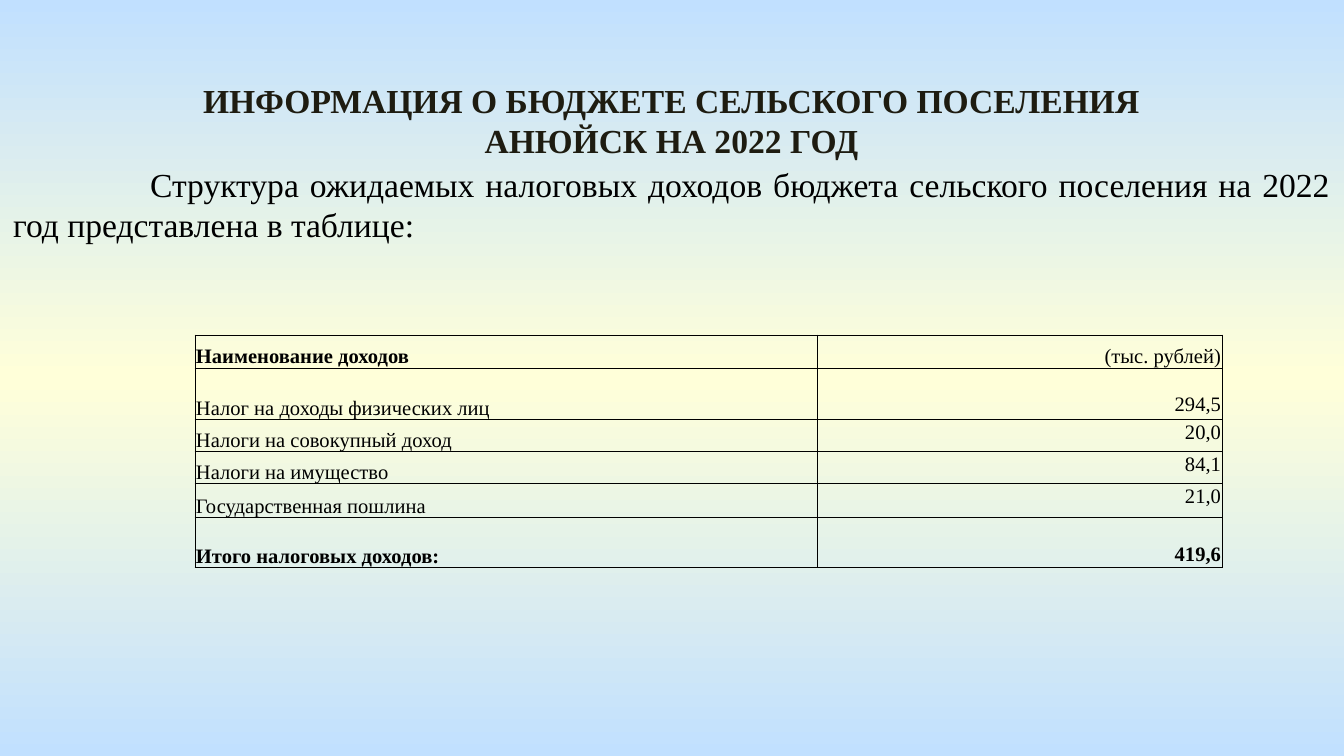
from copy import deepcopy
from dataclasses import dataclass

from pptx import Presentation
from pptx.dml.color import RGBColor
from pptx.enum.text import MSO_ANCHOR, MSO_AUTO_SIZE, PP_ALIGN
from pptx.oxml import parse_xml
from pptx.oxml.ns import nsdecls, qn
from pptx.slide import Slide
from pptx.table import _Cell
from pptx.text.text import TextFrame
from pptx.util import Emu, Pt

BLUE = RGBColor(0xC1, 0xE0, 0xFF)
CREAM = RGBColor(0xFF, 0xFF, 0xD9)
DARK = RGBColor(0x1E, 0x1C, 0x11)
BLACK = RGBColor(0, 0, 0)
FONT = "Times New Roman"
SCALE = 914400 / 134.4
COLS = (622, 405)
GAP = 24


@dataclass
class Row:
    """One line of the income table."""
    name: str
    value: str
    height: int
    bold: tuple[bool, bool] = (False, False)
    anchor: MSO_ANCHOR = MSO_ANCHOR.TOP
    drop: int = 0


ROWS = (
    Row("Наименование доходов", "(тыс. рублей)", 33, (True, False), MSO_ANCHOR.BOTTOM),
    Row("Налог на доходы физических лиц", "294,5", 52, drop=GAP),
    Row("Налоги на совокупный доход", "20,0", 32),
    Row("Налоги на имущество", "84,1", 32),
    Row("Государственная пошлина", "21,0", 34),
    Row("Итого налоговых доходов:", "419,6", 50, (True, True), drop=GAP),
)


def px(n: int) -> Emu:
    """Turn pixels into EMU."""
    return Emu(round(n * SCALE))


def write(frame: TextFrame, text: str, size: int, color: RGBColor,
          align: PP_ALIGN, bold: bool = False) -> None:
    """Fill a frame with one formatted paragraph."""
    frame.text = text
    frame.word_wrap = True
    para = frame.paragraphs[0]
    para.alignment = align
    font = para.runs[0].font
    font.name, font.size, font.bold = FONT, Pt(size), bold
    font.color.rgb = color


def paint(slide: Slide) -> None:
    """Give the slide a three-stop vertical gradient."""
    fill = slide.background.fill
    fill.gradient()
    fill.gradient_angle = 90
    stops = slide.element.find(".//" + qn("a:gsLst"))
    stops.append(deepcopy(stops[0]))
    for stop, place, color in zip(fill.gradient_stops, (0, 0.5, 1), (BLUE, CREAM, BLUE)):
        stop.position = place
        stop.color.rgb = color


def border(cell: _Cell) -> None:
    """Draw thin lines round a clear cell."""
    props = cell._tc.get_or_add_tcPr()
    for side in "LRTB":
        props.append(parse_xml(
            f'<a:ln{side} {nsdecls("a")} w="{Pt(0.5)}"><a:solidFill>'
            f'<a:srgbClr val="{BLACK}"/></a:solidFill></a:ln{side}>'))
    cell.fill.background()


def put(cell: _Cell, text: str, align: PP_ALIGN, bold: bool,
        anchor: MSO_ANCHOR, drop: int = 0) -> None:
    """Set the text and look of one cell."""
    cell.margin_left = cell.margin_right = px(1)
    cell.margin_top, cell.margin_bottom = px(1 + drop), 0
    cell.vertical_anchor = anchor
    write(cell.text_frame, text, 11, BLACK, align, bold)
    border(cell)


def grid(slide: Slide, rows: tuple[Row, ...]) -> None:
    """Draw the income table."""
    table = slide.shapes.add_table(
        len(rows), len(COLS), px(195), px(335), px(sum(COLS)),
        px(sum(row.height for row in rows))).table
    table.first_row = table.horz_banding = False
    for col, width in zip(table.columns, COLS):
        col.width = px(width)
    for i, row in enumerate(rows):
        table.rows[i].height = px(row.height)
        put(table.cell(i, 0), row.name, PP_ALIGN.JUSTIFY, row.bold[0], MSO_ANCHOR.BOTTOM)
        put(table.cell(i, 1), row.value, PP_ALIGN.RIGHT, row.bold[1], row.anchor, row.drop)


def main() -> None:
    """Build and save the slide."""
    deck = Presentation()
    deck.slide_width, deck.slide_height = px(1344), px(756)
    slide = deck.slides.add_slide(deck.slide_layouts[5])
    paint(slide)

    title = slide.shapes.title
    title.left, title.top, title.width, title.height = map(px, (152, 73, 1039, 95))
    write(title.text_frame, "ИНФОРМАЦИЯ О БЮДЖЕТЕ СЕЛЬСКОГО ПОСЕЛЕНИЯ АНЮЙСК НА 2022 ГОД",
          18, DARK, PP_ALIGN.CENTER, True)
    title.text_frame.vertical_anchor = MSO_ANCHOR.TOP
    title.text_frame.auto_size = MSO_AUTO_SIZE.NONE

    intro = slide.shapes.add_textbox(*map(px, (0, 157, 1344, 95))).text_frame
    write(intro, "Структура ожидаемых налоговых доходов бюджета сельского поселения "
          "на 2022 год представлена в таблице:", 18, BLACK, PP_ALIGN.JUSTIFY)
    intro.paragraphs[0]._p.get_or_add_pPr().set("indent", str(px(137)))

    grid(slide, ROWS)
    deck.save("out.pptx")


if __name__ == "__main__":
    main()
